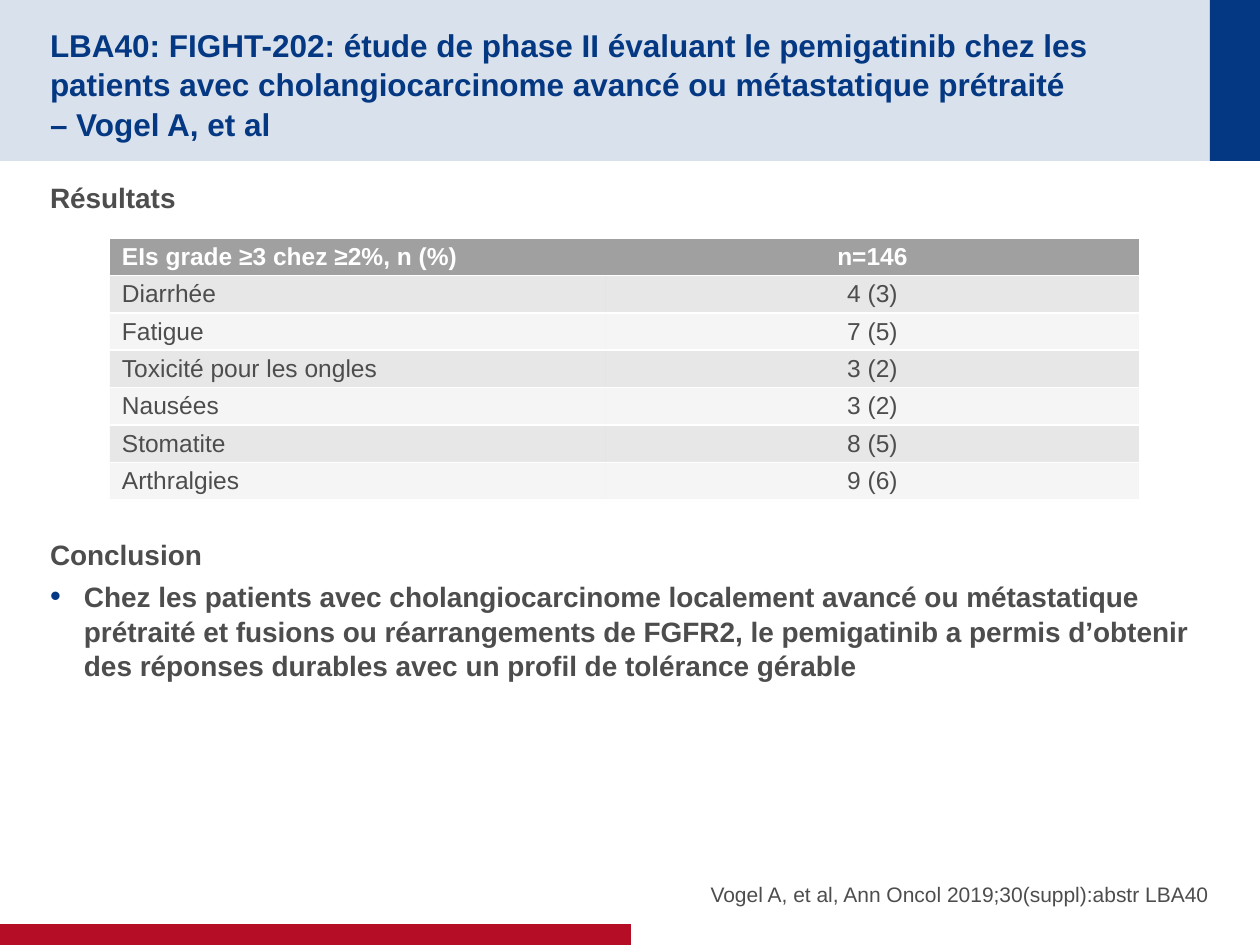
from dataclasses import dataclass

from lxml.etree import SubElement
from pptx import Presentation
from pptx.dml.color import RGBColor
from pptx.enum.shapes import MSO_SHAPE
from pptx.enum.text import MSO_ANCHOR, MSO_AUTO_SIZE, PP_ALIGN
from pptx.oxml import parse_xml
from pptx.oxml.ns import nsdecls, qn
from pptx.util import Pt

SCALE = 914400 / 126
PLAIN_TABLE = "{2D5ABB26-0587-4C30-8999-92F81FD0307C}"


@dataclass(frozen=True)
class Theme:
    """Colours and type sizes of the slide."""
    font: str = "Arial"
    blue: str = "043882"
    red: str = "B60D27"
    ink: str = "4D4D4D"
    grey: str = "A0A0A0"
    white: str = "FFFFFF"
    title: int = 18
    body: int = 16
    cell: int = 14
    source: int = 12


def px(length):
    """Turn pixels into EMU."""
    return round(length * SCALE)


def paint(fill, colour, opacity=100):
    """Fill with a colour at an opacity in percent."""
    fill.solid()
    fill.fore_color.rgb = RGBColor.from_string(colour)
    if opacity < 100:
        colour_node = fill._xPr.find(qn("a:solidFill"))[0]
        SubElement(colour_node, qn("a:alpha"), val=str(opacity * 1000))


def write(para, text, *, font, size, colour, bold=False, align=PP_ALIGN.LEFT,
          before=0, after=0, spacing=1.0):
    """Write text into a paragraph and format it."""
    para.text = text
    para.alignment = align
    para.space_before, para.space_after = Pt(before), Pt(after)
    para.line_spacing = spacing
    for span in para.runs:
        span.font.name, span.font.size, span.font.bold = font, Pt(size), bold
        span.font.color.rgb = RGBColor.from_string(colour)


def set_bullet(para, colour=None, indent=0):
    """Give a paragraph a coloured bullet, or none without a colour."""
    props = para._p.get_or_add_pPr()
    props.set("marL", str(px(indent)))
    props.set("indent", str(-px(indent)))
    if colour is None:
        SubElement(props, qn("a:buNone"))
        return
    SubElement(SubElement(props, qn("a:buClr")), qn("a:srgbClr"), val=colour)
    SubElement(props, qn("a:buSzPct"), val="110000")
    SubElement(props, qn("a:buFont"), typeface="Arial")
    SubElement(props, qn("a:buChar"), char="•")


class SlideWriter:
    """Holds the theme and the current slide."""

    def __init__(self, page, theme):
        self.page = page
        self.theme = theme

    def band(self, left, top, width, height, colour, opacity=100):
        """Add a plain rectangle behind the text."""
        box = self.page.shapes.add_shape(
            MSO_SHAPE.RECTANGLE, px(left), px(top), px(width), px(height))
        box.shadow.inherit = False
        box.line.fill.background()
        paint(box.fill, colour, opacity)
        self.page.shapes.title._element.addprevious(box._element)

    def frame(self, index, left, top, width, height, anchor, insets):
        """Move a placeholder and return its text frame."""
        box = self.page.placeholders[index]
        box.left, box.top, box.width, box.height = map(px, (left, top, width, height))
        frame = box.text_frame
        frame.word_wrap = True
        frame.auto_size = MSO_AUTO_SIZE.NONE
        frame.vertical_anchor = anchor
        frame.margin_left = frame.margin_right = 0
        frame.margin_top, frame.margin_bottom = map(px, insets)
        return frame

    def title(self, text):
        """Fill the title placeholder."""
        frame = self.frame(0, 50, 25, 1150, 111, MSO_ANCHOR.MIDDLE, (6, 0))
        write(frame.paragraphs[0], text, font=self.theme.font, size=self.theme.title,
              colour=self.theme.blue, bold=True, spacing=1.04)

    def body(self, items):
        """Fill the body placeholder from (text, space before, bulleted) items."""
        frame = self.frame(1, 50, 173, 1184, 654, MSO_ANCHOR.TOP, (6, 6))
        for number, (text, before, bulleted) in enumerate(items):
            para = frame.add_paragraph() if number else frame.paragraphs[0]
            write(para, text, font=self.theme.font, size=self.theme.body,
                  colour=self.theme.ink, bold=True, before=before, after=4, spacing=1.04)
            if bulleted:
                set_bullet(para, self.theme.blue, 34)
            else:
                set_bullet(para)

    def source(self, text):
        """Fill the second body placeholder with the reference."""
        frame = self.frame(2, 640, 840, 569, 67, MSO_ANCHOR.BOTTOM, (0, 0))
        para = frame.paragraphs[0]
        write(para, text, font=self.theme.font, size=self.theme.source,
              colour=self.theme.ink, align=PP_ALIGN.RIGHT, after=4)
        set_bullet(para)

    def table(self, left, top, height, widths, rows):
        """Add a table with a header row and two alternating tints."""
        grid = self.page.shapes.add_table(
            len(rows), len(widths), px(left), px(top), px(sum(widths)), px(height)).table
        grid._tbl.tblPr.find(qn("a:tableStyleId")).text = PLAIN_TABLE
        for column, width in zip(grid.columns, widths):
            column.width = px(width)
        for number, values in enumerate(rows):
            grid.rows[number].height = px(height / len(rows))
            opacity = 100 if number == 0 else 25 if number % 2 else 10
            for position, text in enumerate(values):
                self.cell(grid.cell(number, position), text, opacity,
                          header=number == 0, centred=position > 0)

    def cell(self, cell, text, opacity, header, centred):
        """Fill one table cell and rule it above and below."""
        cell.vertical_anchor = MSO_ANCHOR.MIDDLE
        cell.margin_left = cell.margin_right = px(12)
        cell.margin_top = cell.margin_bottom = px(4)
        write(cell.text_frame.paragraphs[0], text, font=self.theme.font,
              size=self.theme.cell, bold=header,
              colour=self.theme.white if header else self.theme.ink,
              align=PP_ALIGN.CENTER if centred else PP_ALIGN.LEFT)
        paint(cell.fill, self.theme.grey, opacity)
        for side in ("lnB", "lnT"):
            cell._tc.get_or_add_tcPr().insert(0, parse_xml(
                f'<a:{side} {nsdecls("a")} w="12700"><a:solidFill>'
                f'<a:srgbClr val="{self.theme.white}"/></a:solidFill></a:{side}>'))


def main():
    """Build the slide and save it."""
    deck = Presentation()
    deck.slide_width, deck.slide_height = px(1260), px(945)
    theme = Theme()
    writer = SlideWriter(deck.slides.add_slide(deck.slide_layouts[3]), theme)
    writer.band(0, 0, 1260, 161, theme.blue, 15)
    writer.band(1210, 0, 50, 161, theme.blue)
    writer.band(0, 924, 631, 21, theme.red)
    writer.title("LBA40: FIGHT-202: étude de phase II évaluant le pemigatinib chez les "
                 "patients avec cholangiocarcinome avancé ou métastatique prétraité \n"
                 "– Vogel A, et al")
    writer.body([
        ("Résultats", 0, False),
        ("Conclusion", 180, False),
        ("Chez les patients avec cholangiocarcinome localement avancé ou métastatique "
         "prétraité et fusions ou réarrangements de FGFR2, le pemigatinib a permis "
         "d’obtenir des réponses durables avec un profil de tolérance gérable", 0, True),
    ])
    writer.source("Vogel A, et al, Ann Oncol 2019;30(suppl):abstr LBA40")
    writer.table(110, 238, 262, (496, 533), [
        ("EIs grade ≥3 chez ≥2%, n (%)", "n=146"),
        ("Diarrhée", "4 (3)"),
        ("Fatigue", "7 (5)"),
        ("Toxicité pour les ongles", "3 (2)"),
        ("Nausées", "3 (2)"),
        ("Stomatite", "8 (5)"),
        ("Arthralgies", "9 (6)"),
    ])
    deck.save("out.pptx")


if __name__ == "__main__":
    main()
